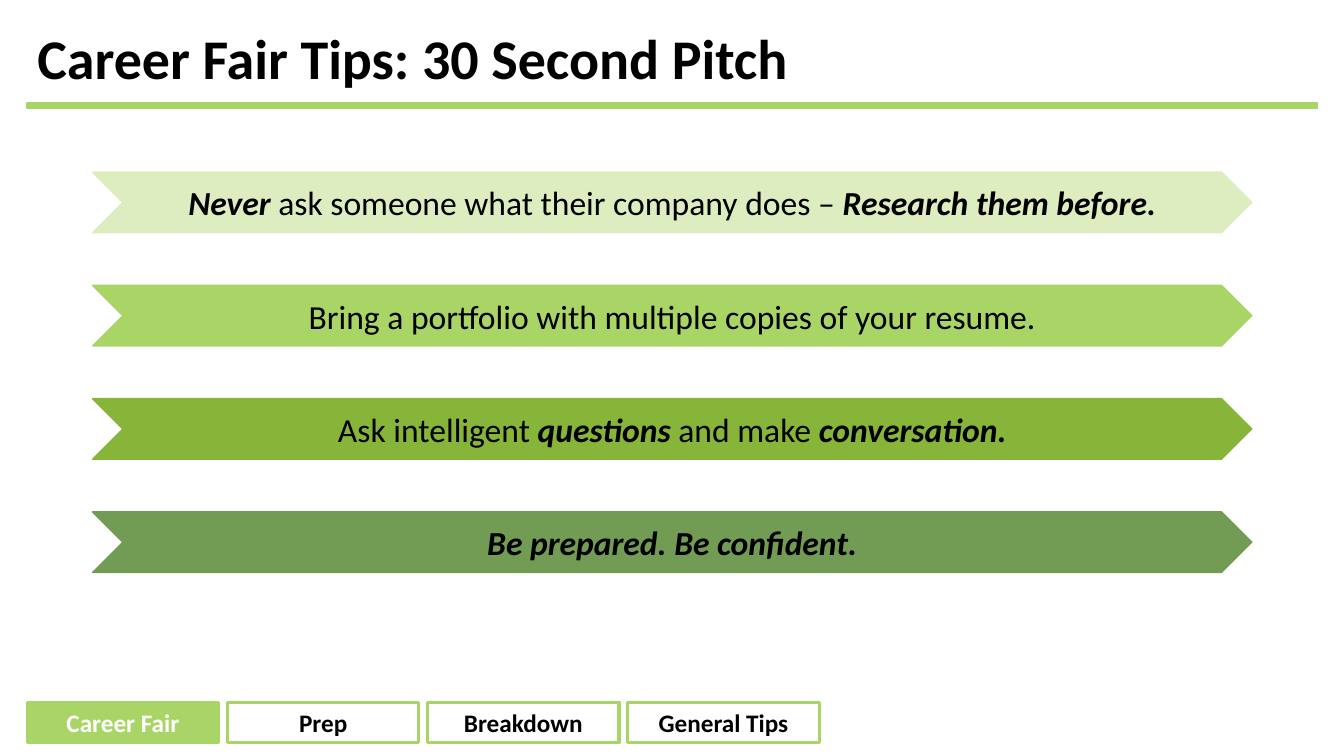
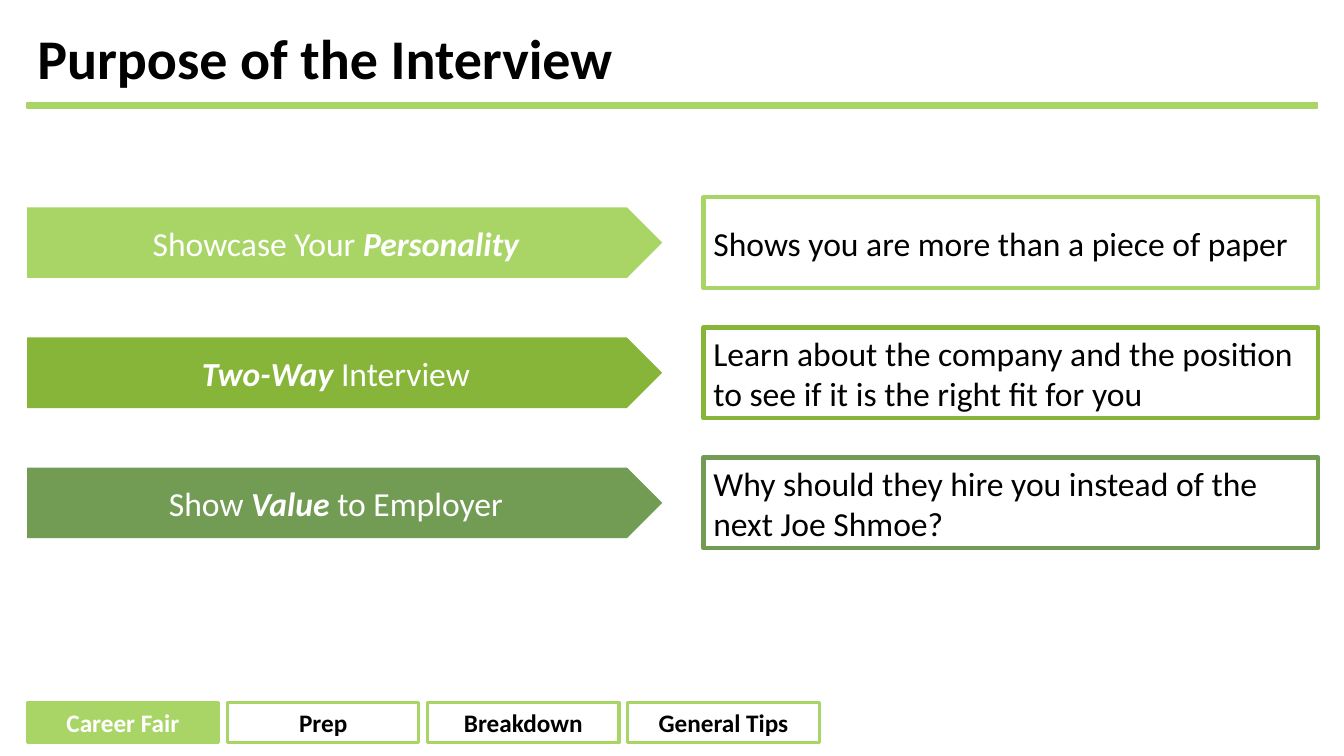
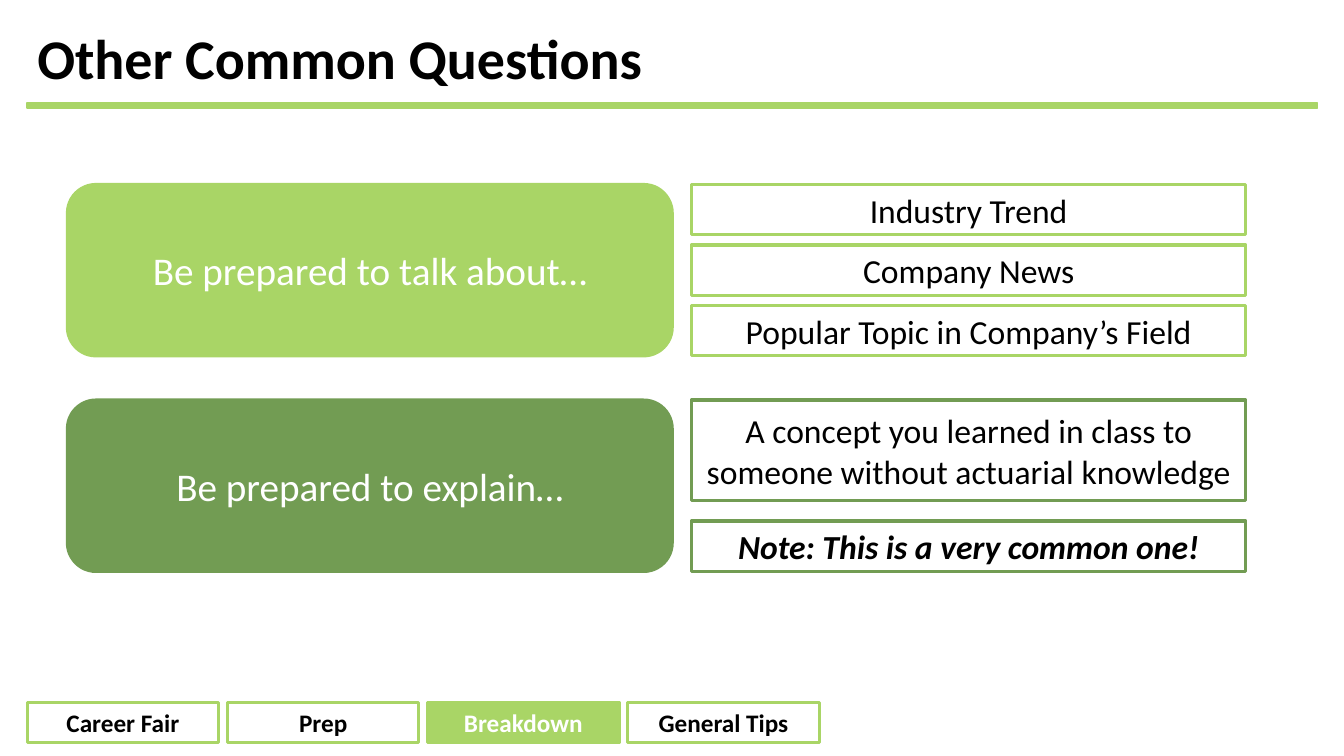
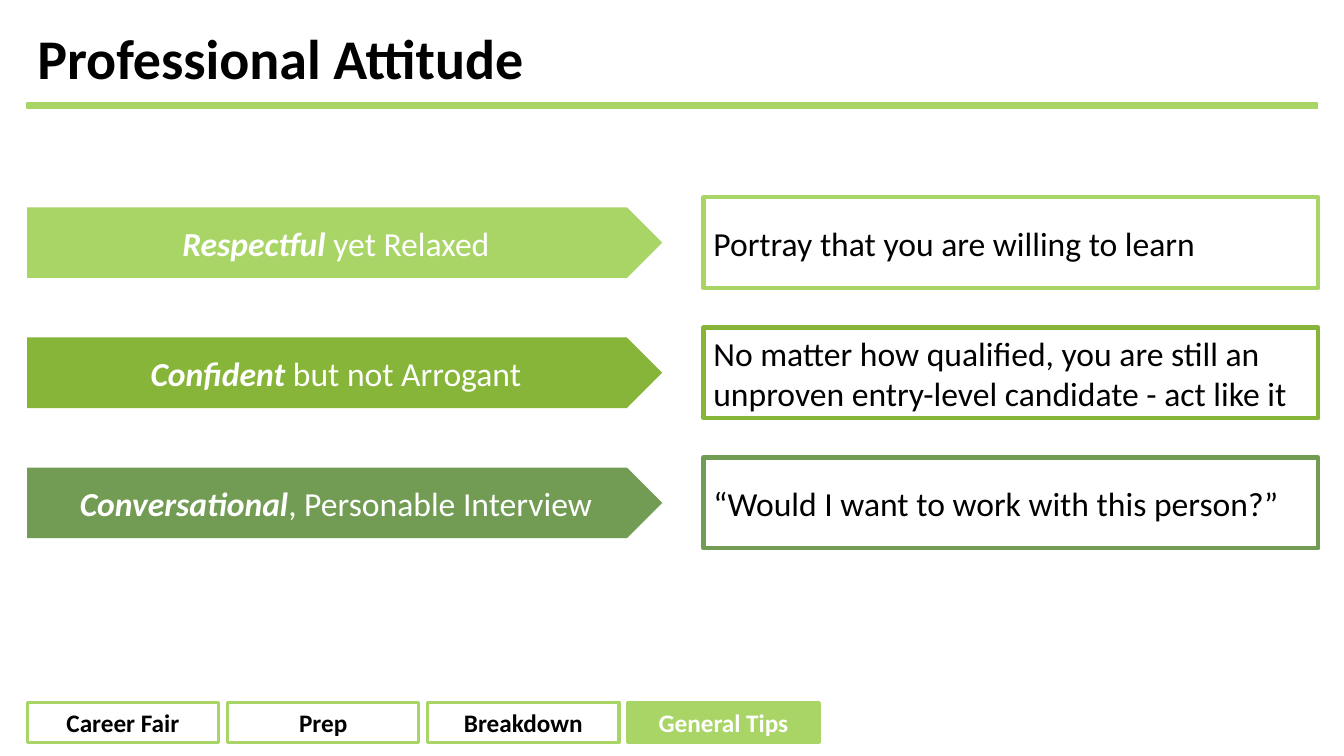
from dataclasses import dataclass

from pptx import Presentation
from pptx.dml.color import RGBColor
from pptx.enum.shapes import MSO_SHAPE
from pptx.enum.text import MSO_ANCHOR, PP_ALIGN
from pptx.util import Pt


@dataclass(frozen=True)
class Theme:
    font: str = "Calibri"
    black: str = "000000"
    white: str = "FFFFFF"
    pale: str = "DEEDC0"
    light: str = "A9D566"
    medium: str = "86B539"
    dark: str = "729C53"
    title_size: float = 40
    lead_size: float = 28
    body_size: float = 24
    tab_size: float = 18
    margin: float = 19.44
    content_width: float = 921.6


theme = Theme()


def write_text(paragraph, text, size, color, bold=False):
    """Add text run by run; parts between asterisks are bold italic."""
    for index, part in enumerate(text.split("*")):
        if part:
            emphasis = index % 2 == 1
            run = paragraph.add_run()
            run.text = part
            run.font.name = theme.font
            run.font.size = Pt(size)
            run.font.bold = bold or emphasis
            run.font.italic = emphasis
            run.font.color.rgb = RGBColor.from_string(color)


def add_box(slide, kind, box, fill, line=None, line_width=1.0, text="",
            size=theme.body_size, color=theme.black, bold=False, align=PP_ALIGN.CENTER):
    """Add a preset shape at (left, top, width, height) in points."""
    shape = slide.shapes.add_shape(kind, *[Pt(length) for length in box])
    shape.shadow.inherit = False
    shape.fill.solid()
    shape.fill.fore_color.rgb = RGBColor.from_string(fill)
    if line:
        shape.line.color.rgb = RGBColor.from_string(line)
        shape.line.width = Pt(line_width)
    else:
        shape.line.fill.background()
    frame = shape.text_frame
    frame.word_wrap = True
    frame.vertical_anchor = MSO_ANCHOR.MIDDLE
    frame.paragraphs[0].alignment = align
    write_text(frame.paragraphs[0], text, size, color, bold)
    return shape


presentation = Presentation()
presentation.slide_width = Pt(960)
presentation.slide_height = Pt(540)

# Layout: title position
layout = presentation.slide_layouts.get_by_name("Title Only")
layout_title = layout.placeholders[0]
layout_title.left, layout_title.top = Pt(theme.margin), Pt(13.7)
layout_title.width, layout_title.height = Pt(theme.content_width), Pt(59.8)
layout_title.text_frame.vertical_anchor = MSO_ANCHOR.MIDDLE

# Slides with title and section tabs
sections = ["Career Fair", "Prep", "Breakdown", "General Tips"]
outline = [
    ("Career Fair Tips: 30 Second Pitch", "Career Fair"),
    ("Purpose of the Interview", "Career Fair"),
    ("Other Common Questions", "Breakdown"),
    ("Professional Attitude", "General Tips"),
]
slides = []
for title, current_section in outline:
    slide = presentation.slides.add_slide(layout)
    slides.append(slide)
    paragraph = slide.shapes.title.text_frame.paragraphs[0]
    paragraph.alignment = PP_ALIGN.LEFT
    paragraph.line_spacing = 0.9
    write_text(paragraph, title, theme.title_size, theme.black, bold=True)
    for index, section in enumerate(sections):
        active = section == current_section
        add_box(slide, MSO_SHAPE.RECTANGLE,
                (theme.margin + index * 143, 501.8, 136.8, 28.8),
                theme.light if active else theme.white, theme.light, 2.25,
                section, theme.tab_size, theme.white if active else theme.black, bold=True)

pitch_slide, purpose_slide, questions_slide, attitude_slide = slides

# Layout: rule under the title, shared by all slides
title_rule = add_box(pitch_slide, MSO_SHAPE.RECTANGLE,
                     (theme.margin, 73.5, theme.content_width, 3.6), theme.light, theme.light)
title_rule.element.nvSpPr.cNvPr.set("id", "20")
layout.shapes.element.insert(2, title_rule.element)

# Pitch: four chevron bars
tips = [
    (theme.pale, "*Never* ask someone what their company does – *Research them before.*"),
    (theme.light, "Bring a portfolio with multiple copies of your resume."),
    (theme.medium, "Ask intelligent *questions* and make *conversation.*"),
    (theme.dark, "*Be prepared. Be confident.*"),
]
for index, (color, tip) in enumerate(tips):
    add_box(pitch_slide, MSO_SHAPE.CHEVRON, (66.2, 123 + index * 80.9, 828, 43.2),
            color, color, text=tip)

# Purpose and attitude: arrows, each with an explanation beside it
arrow_rows = [
    (purpose_slide, [
        ("Showcase Your *Personality*", "Shows you are more than a piece of paper"),
        ("*Two-Way *Interview",
         "Learn about the company and the position to see if it is the right fit for you"),
        ("Show *Value* to Employer", "Why should they hire you instead of the next Joe Shmoe?"),
    ]),
    (attitude_slide, [
        ("*Respectful* yet Relaxed", "Portray that you are willing to learn"),
        ("*Confident* but not Arrogant",
         "No matter how qualified, you are still an unproven entry-level candidate - act like it"),
        ("*Conversational*, Personable Interview", "“Would I want to work with this person?”"),
    ]),
]
for slide, rows in arrow_rows:
    for index, (point, explanation) in enumerate(rows):
        color = (theme.light, theme.medium, theme.dark)[index]
        top = 141 + index * 92.9
        add_box(slide, MSO_SHAPE.PENTAGON, (theme.margin, top + 7.2, 453.6, 50.4),
                color, text=point, color=theme.white)
        add_box(slide, MSO_SHAPE.RECTANGLE, (502.5, top, 439.2, 64.8),
                theme.white, color, 3, explanation, align=PP_ALIGN.LEFT)

# Questions: prompts with evenly spaced answers of (text, height)
prompt_height = 122.4
prompts = [
    (131.8, theme.light, "Be prepared to talk about…", [
        ("Industry Trend", 36),
        ("Company News", 36),
        ("Popular Topic in Company’s Field", 36),
    ]),
    (285.8, theme.dark, "Be prepared to explain…", [
        ("A concept you learned in class to someone without actuarial knowledge", 72),
        ("*Note: This is a very common one!*", 36),
    ]),
]
for top, color, prompt, answers in prompts:
    add_box(questions_slide, MSO_SHAPE.ROUNDED_RECTANGLE, (48.2, top, 432, prompt_height),
            color, color, 2.25, prompt, theme.lead_size, theme.white)
    gap = (prompt_height - sum(height for _, height in answers)) / (len(answers) - 1)
    for answer, height in answers:
        add_box(questions_slide, MSO_SHAPE.RECTANGLE, (493.9, top, 396, height),
                theme.white, color, 2.25, answer)
        top += height + gap

presentation.save("out.pptx")
